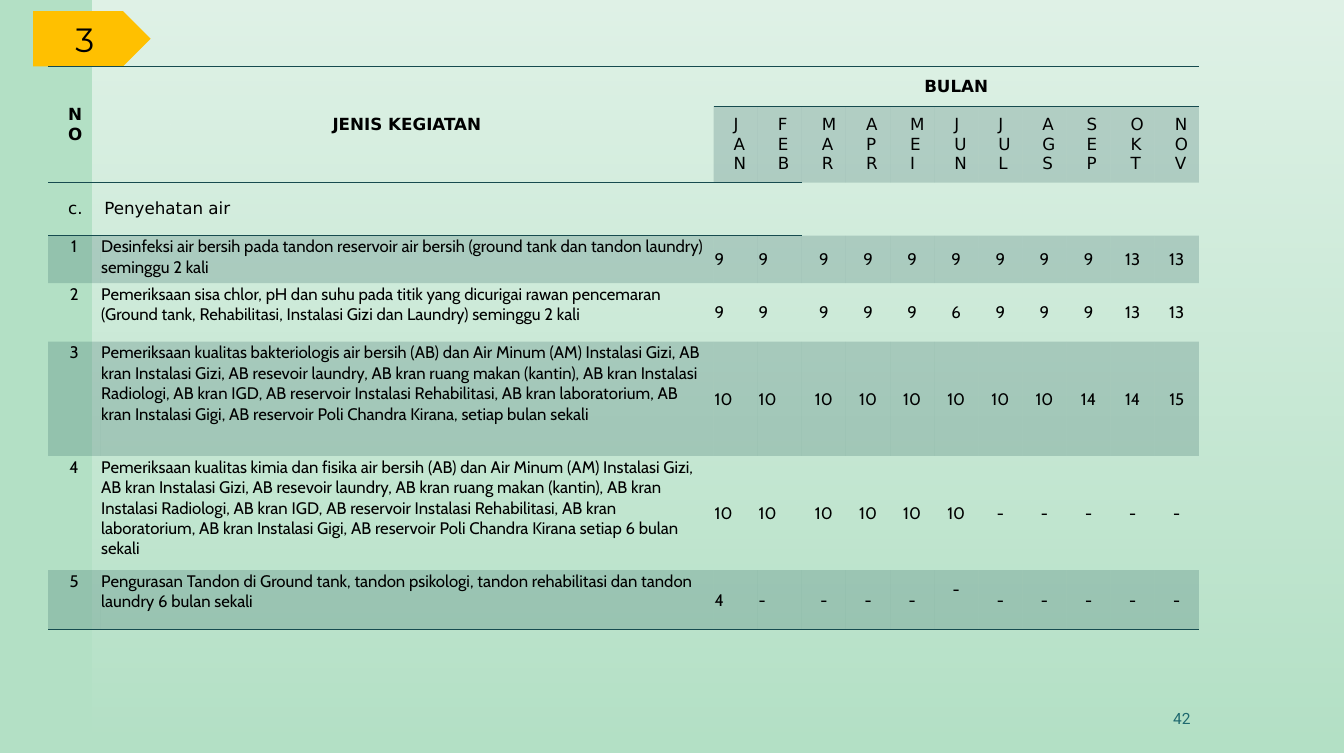
from lxml.etree import SubElement
from pptx import Presentation
from pptx.dml.color import RGBColor as Rgb
from pptx.enum.shapes import MSO_SHAPE as Shape
from pptx.enum.text import MSO_ANCHOR as Anchor, PP_ALIGN as Align
from pptx.oxml.ns import qn
from pptx.util import Pt

HUES = {"mint": "B3E0C5", "white": "FFFFFF", "gold": "FFC000",
        "black": "000000", "pine": "164B4F", "teal": "1F696F"}
SANS, CABIN = "DejaVu Sans", "Cabin"
MONTHS = "JAN FEB MAR APR MEI JUN JUL AGS SEP OKT NOV".split()
TASKS = [
    ("Desinfeksi air bersih pada tandon reservoir air bersih (ground tank dan tandon laundry) seminggu 2 kali",
     "9 9 9 9 9 9 9 9 9 13 13"),
    ("Pemeriksaan sisa chlor, pH dan suhu pada titik yang dicurigai rawan pencemaran "
     "(Ground tank, Rehabilitasi, Instalasi Gizi dan Laundry) seminggu 2 kali",
     "9 9 9 9 9 6 9 9 9 13 13"),
    ("Pemeriksaan kualitas bakteriologis air bersih (AB) dan Air Minum (AM) Instalasi Gizi, "
     "AB kran Instalasi Gizi, AB resevoir laundry, AB kran ruang makan (kantin), "
     "AB kran Instalasi Radiologi, AB kran IGD, AB reservoir Instalasi Rehabilitasi, "
     "AB kran laboratorium, AB kran Instalasi Gigi, AB reservoir Poli Chandra Kirana, setiap bulan sekali",
     "10 10 10 10 10 10 10 10 14 14 15"),
    ("Pemeriksaan kualitas kimia dan fisika air bersih (AB) dan Air Minum (AM) Instalasi Gizi, "
     "AB kran Instalasi Gizi, AB resevoir laundry, AB kran ruang makan (kantin), "
     "AB kran Instalasi Radiologi, AB kran IGD, AB reservoir Instalasi Rehabilitasi, "
     "AB kran laboratorium, AB kran Instalasi Gigi, AB reservoir Poli Chandra Kirana setiap 6 bulan sekali",
     "10 10 10 10 10 10 - - - - -"),
    ("Pengurasan Tandon di Ground tank, tandon psikologi, tandon rehabilitasi dan tandon laundry 6 bulan sekali",
     "4 - - - - - - - - - -"),
]
ROWS = [28.5, 53, 38, 34, 42, 82, 82, 42.5]
COLS = [37.4, 440] + [31.6] * len(MONTHS)


def style(par, face, size, hue, align):
    par.alignment = align
    par.font.name = face
    par.font.size = Pt(size)
    par.font.color.rgb = Rgb.from_string(HUES[hue])


def rule(cell, side):
    line = cell._tc.get_or_add_tcPr().makeelement(qn("a:" + side), {"w": str(Pt(1))})
    fill = SubElement(line, qn("a:solidFill"))
    SubElement(fill, qn("a:srgbClr"), val=HUES["pine"])
    cell._tc.tcPr.insert(0, line)


deck = Presentation()
deck.slide_width, deck.slide_height = Pt(964), Pt(540)
slide = deck.slides.add_slide(deck.slide_layouts[6])
back = slide.background.fill
back.solid()
back.fore_color.rgb = Rgb.from_string(HUES["mint"])

veil = slide.shapes.add_shape(Shape.RECTANGLE, Pt(66.2), 0, Pt(897.8), Pt(540))
veil.shadow.inherit = False
veil.line.fill.background()
veil.fill.gradient()
veil.fill.gradient_angle = 270
for stop in veil.fill.gradient_stops:
    stop.color.rgb = Rgb.from_string(HUES["white"])
for tint, alpha in zip(veil._element.iter(qn("a:srgbClr")), (60000, 0)):
    SubElement(tint, qn("a:alpha"), val=str(alpha))

page = slide.shapes.add_textbox(Pt(636.5), Pt(500.4), Pt(224.6), Pt(28.8)).text_frame
page.word_wrap = True
page.vertical_anchor = Anchor.MIDDLE
page.text = "42"
style(page.paragraphs[0], "Roboto", 11.1, "teal", Align.RIGHT)

tag = slide.shapes.add_shape(Shape.PENTAGON, Pt(23.8), Pt(8), Pt(84.2), Pt(39.6))
tag.shadow.inherit = False
tag.line.fill.background()
tag.fill.solid()
tag.fill.fore_color.rgb = Rgb.from_string(HUES["gold"])
tag.text_frame.vertical_anchor = Anchor.MIDDLE
tag.text_frame.text = "3"
style(tag.text_frame.paragraphs[0], "Montserrat", 24.1, "black", Align.CENTER)

frame = slide.shapes.add_table(len(ROWS), len(COLS), Pt(34.5), Pt(47.8), Pt(sum(COLS)), Pt(sum(ROWS)))
table = frame.table
table.first_row = table.horz_banding = False
for mark in frame._element.iter(qn("a:tableStyleId")):
    mark.text = "{2D5ABB26-0587-4C30-8999-92F81FD0307C}"
for row, high in zip(table.rows, ROWS):
    row.height = Pt(high)
for col, wide in zip(table.columns, COLS):
    col.width = Pt(wide)

grid = [["NO", "JENIS KEGIATAN", "BULAN"] + [""] * 10,
        ["", ""] + MONTHS,
        ["c.\tPenyehatan air"] + [""] * 12]
for num, (task, counts) in enumerate(TASKS, 1):
    grid.append([str(num), task] + counts.split())

for r, texts in enumerate(grid):
    for c, text in enumerate(texts):
        cell = table.cell(r, c)
        head = r < 3
        side, top, foot = (14.4, 5.76, 5.76) if head else (0.72, 0.72, 0)
        cell.margin_left = cell.margin_right = Pt(side)
        cell.margin_top, cell.margin_bottom = Pt(top), Pt(foot)
        cell.vertical_anchor = Anchor.MIDDLE if head or c > 1 else Anchor.TOP
        cell.text = text
        par = cell.text_frame.paragraphs[0]
        left = r == 2 or (r > 2 and c in (1, 2, 3))
        style(par, SANS if head else CABIN, 12, "black", Align.LEFT if left else Align.CENTER)
        par.font.bold = r == 0
        if r in (3, 5, 7) or (r == 1 and c > 1):
            cell.fill.solid()
            cell.fill.fore_color.rgb = Rgb.from_string(HUES["pine"])
            for tint in cell._tc.tcPr.iter(qn("a:srgbClr")):
                SubElement(tint, qn("a:alpha"), val="20000")
        else:
            cell.fill.background()
        if r == 7 or (r == 0 and c > 1) or (r == 1 and c < 2):
            rule(cell, "lnB")
        if r == 0 or (r == 2 and c < 4):
            rule(cell, "lnT")

table.cell(7, 7).margin_bottom = Pt(16)
item = table.cell(2, 0).text_frame.paragraphs[0]._p.get_or_add_pPr()
item.set("marL", str(Pt(26)))
item.set("indent", str(-Pt(26)))
for start, end in (((0, 0), (1, 0)), ((0, 1), (1, 1)), ((0, 2), (0, 12)), ((2, 0), (2, 3))):
    table.cell(*start).merge(table.cell(*end))

deck.save("out.pptx")
